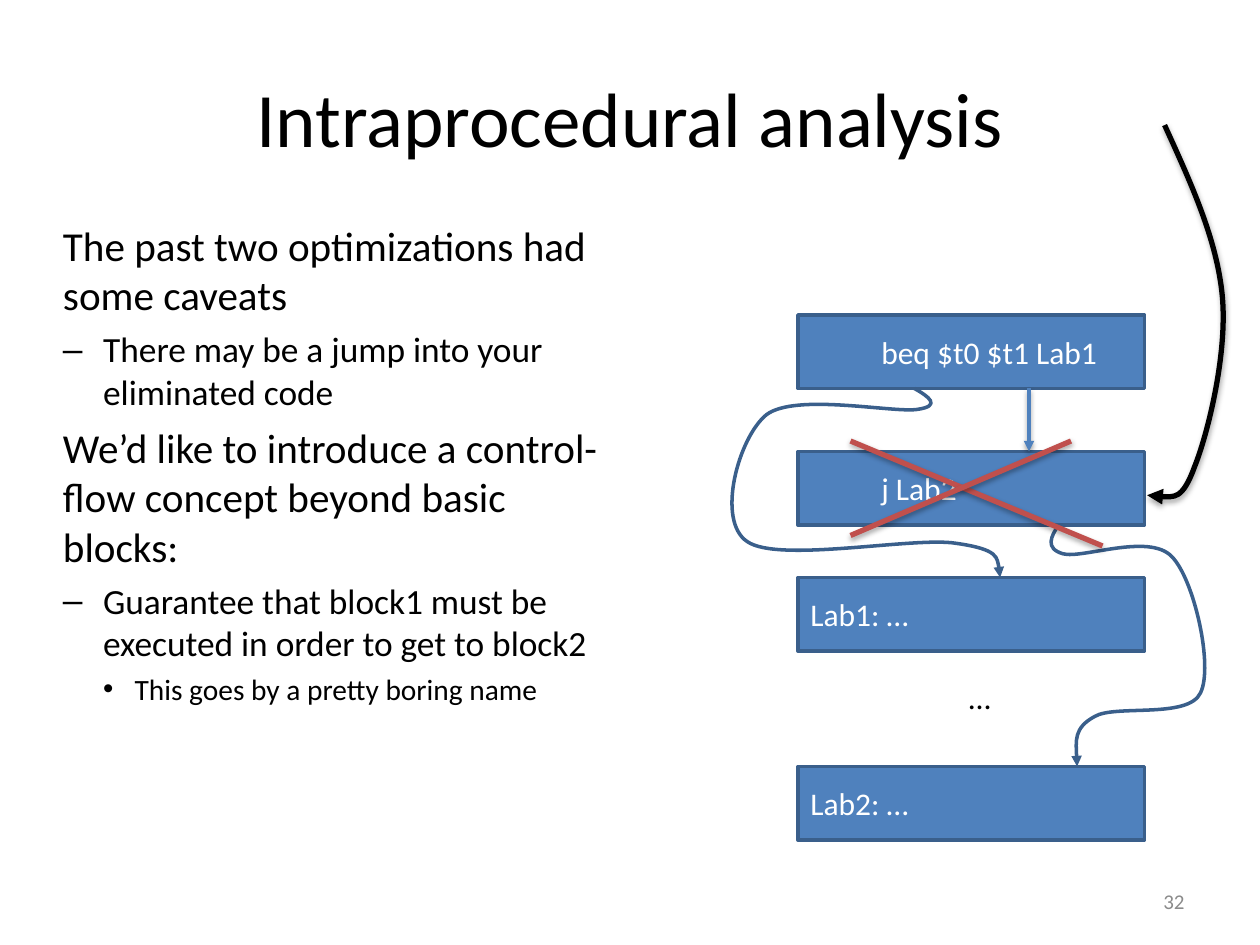
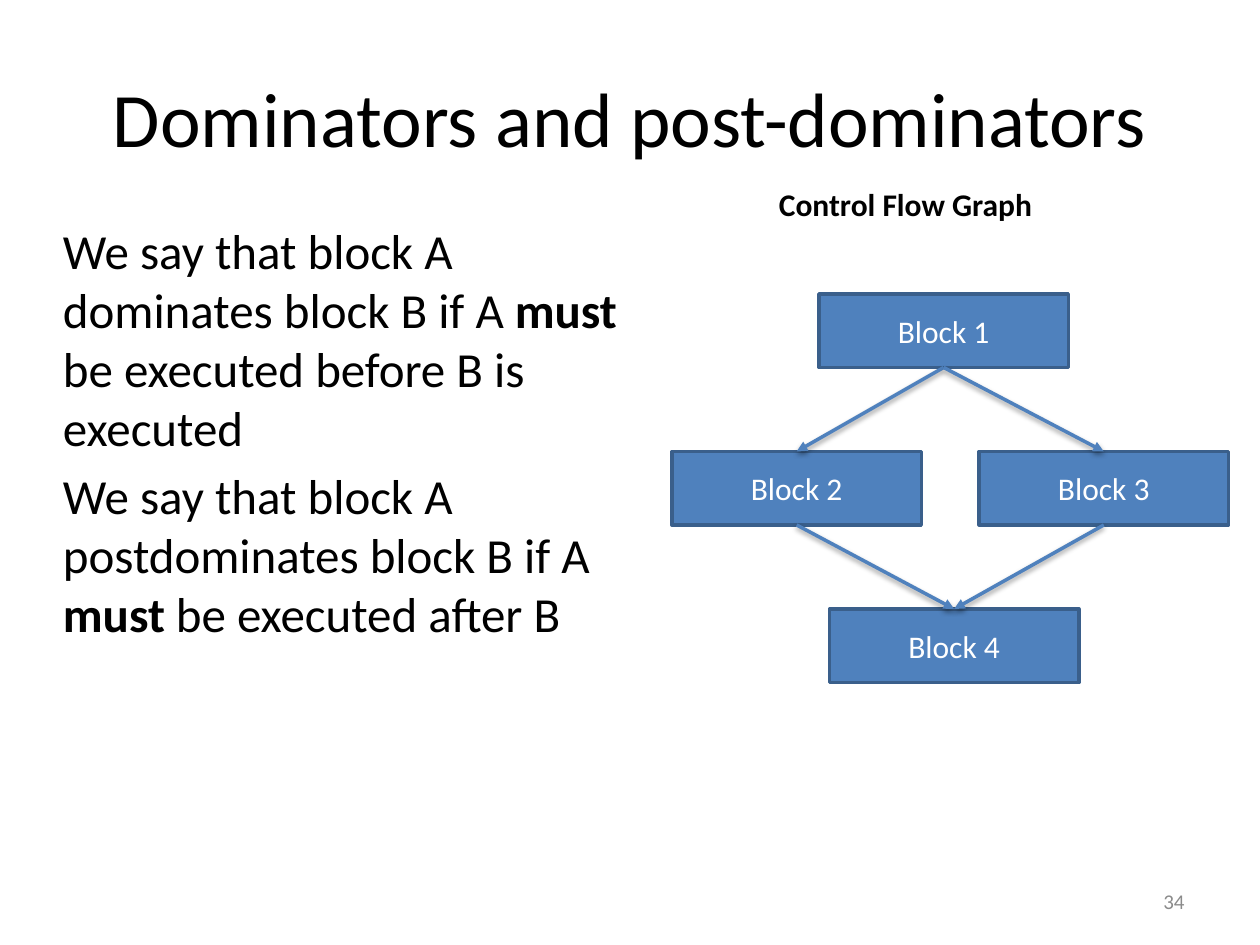
from lxml import etree
from pptx import Presentation
from pptx.dml.color import RGBColor
from pptx.enum.shapes import MSO_CONNECTOR, MSO_SHAPE
from pptx.enum.text import MSO_ANCHOR, PP_ALIGN
from pptx.oxml.ns import qn
from pptx.util import Pt

RECTANGLE = MSO_SHAPE.RECTANGLE
STRAIGHT = MSO_CONNECTOR.STRAIGHT
LEFT, CENTER, RIGHT = PP_ALIGN.LEFT, PP_ALIGN.CENTER, PP_ALIGN.RIGHT
TOP, MIDDLE = MSO_ANCHOR.TOP, MSO_ANCHOR.MIDDLE
BOTTOM_SIDE, TOP_SIDE = 2, 0

FONT = "Calibri"
BULLET_FONT = "Arial"
COLORS = {"text": "000000", "number": "8B8B8B", "block": "4F81BD",
          "edge": "3A5F8B", "block_text": "FFFFFF", "cross": "C0504D"}
BLOCK_HEIGHT = 42
# Level: left margin, hanging indent, space before, bullet
LEVELS = [(0, 0, 5.6, None), (23, -23, 4.8, "–"), (41, -18, 4, "•")]

SLIDES = [
    {
        "title": "Intraprocedural analysis",
        "number": "32",
        # Level, size, spans of (text, bold)
        "body": [
            (0, 23.5, [("The past two optimizations had some caveats", False)]),
            (1, 20.2, [("There may be a jump into your eliminated code", False)]),
            (0, 23.5, [("We’d like to introduce a control-flow concept beyond basic blocks:", False)]),
            (1, 20.2, [("Guarantee that block1 must be executed in order to get to block2", False)]),
            (2, 16.8, [("This goes by a pretty boring name", False)]),
        ],
        "block_width": 198,
        "block_align": LEFT,
        # Text, left, top, text indent
        "blocks": [("beq $t0 $t1 Lab1", 456, 180, 40.5), ("j Lab2", 456, 258, 40.5),
                   ("Lab1: …", 456, 330, 0), ("Lab2: …", 456, 438, 0)],
        "joins": [],
        # Text, left, top, width, bold, wrap
        "label": ("…", 546.5, 384, 26.5, False, False),
    },
    {
        "title": "Dominators and post-dominators",
        "number": "34",
        "body": [
            (0, 28, [("We say that block A dominates block B if A ", False),
                     ("must", True), (" be executed before B is executed", False)]),
            (0, 28, [("We say that block A postdominates block B if A ", False),
                     ("must", True), (" be executed after B", False)]),
        ],
        "block_width": 142.5,
        "block_align": CENTER,
        "blocks": [("Block 1", 468, 168, 0), ("Block 2", 384, 258, 0),
                   ("Block 3", 559.5, 258, 0), ("Block 4", 474, 348, 0)],
        "joins": [(0, 1), (0, 2), (1, 3), (2, 3)],
        "label": ("Control Flow Graph", 438, 102, 186, True, True),
    },
]


def write(shape, text, size, color, align=LEFT, anchor=TOP, bold=False, wrap=True):
    frame = shape.text_frame
    frame.word_wrap = wrap
    frame.vertical_anchor = anchor
    para = frame.paragraphs[0]
    para.text = text
    para.alignment = align
    para.font.name = FONT
    para.font.size = Pt(size)
    para.font.bold = bold
    para.font.color.rgb = RGBColor.from_string(COLORS[color])
    return para


def style_line(shape, color, width, arrow=True, shadow=0):
    """Colour a line, with an optional arrowhead and shadow opacity in percent."""
    shape.line.color.rgb = RGBColor.from_string(COLORS[color])
    shape.line.width = Pt(width)
    properties = shape._element.spPr
    if arrow:
        etree.SubElement(properties.find(qn("a:ln")), qn("a:tailEnd"), type="triangle")
    effects = etree.SubElement(properties, qn("a:effectLst"))
    if shadow:
        outer = etree.SubElement(effects, qn("a:outerShdw"), blurRad=str(Pt(3.1)),
                                 dist=str(Pt(1.7)), dir="5400000", rotWithShape="0")
        black = etree.SubElement(outer, qn("a:srgbClr"), val="000000")
        etree.SubElement(black, qn("a:alpha"), val=str(shadow * 1000))


deck = Presentation()
deck.slide_width, deck.slide_height = Pt(720), Pt(540)
pages = []

for content in SLIDES:
    page = deck.slides.add_slide(deck.slide_layouts[6])
    pages.append(page)

    # Title and body
    title = page.shapes.add_textbox(Pt(36), Pt(21.6), Pt(648), Pt(90))
    body = page.shapes.add_textbox(Pt(36), Pt(126), Pt(318), Pt(356.4))
    for box in (title, body):
        frame = box.text_frame
        frame.margin_left = frame.margin_right = frame.margin_top = frame.margin_bottom = 0
    write(title, content["title"], 44, "text", CENTER, MIDDLE)

    frame = body.text_frame
    frame.word_wrap = True
    for index, (level, size, spans) in enumerate(content["body"]):
        para = frame.add_paragraph() if index else frame.paragraphs[0]
        margin, indent, space, bullet = LEVELS[level]
        para.level = level
        para.space_before = Pt(space)
        para.font.name = FONT
        para.font.size = Pt(size)
        para.font.color.rgb = RGBColor.from_string(COLORS["text"])
        for text, bold in spans:
            span = para.add_run()
            span.text = text
            span.font.bold = bold
        settings = para._p.get_or_add_pPr()
        settings.set("marL", str(Pt(margin)))
        settings.set("indent", str(Pt(indent)))
        if bullet:
            spacing = settings.find(qn("a:spcBef"))
            spacing.addnext(etree.Element(qn("a:buChar"), char=bullet))
            spacing.addnext(etree.Element(qn("a:buFont"), typeface=BULLET_FONT))

    # Code blocks
    blocks = []
    for text, left, top, indent in content["blocks"]:
        block = page.shapes.add_shape(RECTANGLE, Pt(left), Pt(top),
                                      Pt(content["block_width"]), Pt(BLOCK_HEIGHT))
        block.fill.solid()
        block.fill.fore_color.rgb = RGBColor.from_string(COLORS["block"])
        style_line(block, "edge", 2, arrow=False)
        para = write(block, text, 18, "block_text", content["block_align"], MIDDLE)
        para._p.get_or_add_pPr().set("marL", str(Pt(indent)))
        blocks.append(block)

    # Arrows from block to block
    for source, target in content["joins"]:
        arrow = page.shapes.add_connector(STRAIGHT, 0, 0, 0, 0)
        arrow.begin_connect(blocks[source], BOTTOM_SIDE)
        arrow.end_connect(blocks[target], TOP_SIDE)
        style_line(arrow, "block", 2, shadow=38)

    # Diagram label and slide number
    text, left, top, width, bold, wrap = content["label"]
    label = page.shapes.add_textbox(Pt(left), Pt(top), Pt(width), Pt(29))
    write(label, text, 18, "text", bold=bold, wrap=wrap)
    number = page.shapes.add_textbox(Pt(516), Pt(500.5), Pt(168), Pt(28.8))
    write(number, content["number"], 12, "number", RIGHT, MIDDLE)

# Curved jumps on the first slide: colour, width, shadow, frame,
# then the start and, for each piece, two controls and an end
page = pages[0]
JUMPS = [
    ("edge", 2, 0, (418.5, 222, 153, 108),
     [(522.5, 222),
      (530.5, 226.5), (538.5, 232), (524, 234),
      (510, 236), (454.5, 224.5), (438, 237),
      (422, 250), (409, 297.5), (427, 309.5),
      (445, 322), (522.5, 306.5), (546.5, 310.5),
      (571, 314), (571, 322.5), (571.5, 330)]),
    ("edge", 2, 0, (600.5, 300, 87.5, 138),
     [(605, 300),
      (600.5, 306.5), (597, 313.5), (607.5, 316.5),
      (618.5, 319.5), (656.5, 304.5), (669.5, 318),
      (682.5, 331), (693.5, 381), (686, 396),
      (679, 411), (637, 402.5), (625.5, 409.5),
      (613.5, 416), (615, 427), (615.5, 438)]),
    ("text", 3, 35, (655.5, 71.5, 43, 212.5),
     [(665.5, 71.5),
      (680.5, 104.5), (695.5, 137), (698.5, 169.5),
      (701.5, 202.5), (690, 248.5), (682.5, 267),
      (675.5, 286), (665.5, 284.5), (655.5, 283)]),
]
for color, width, shadow, bounds, knots in JUMPS:
    builder = page.shapes.build_freeform(*map(Pt, knots[0]))
    builder.add_line_segments([tuple(map(Pt, knot)) for knot in knots[3::3]], close=False)
    jump = builder.convert_to_shape()
    jump.left, jump.top, jump.width, jump.height = map(Pt, bounds)

    # Bend the straight pieces into cubic curves within the frame
    outline = next(jump._element.iter(qn("a:path")))
    outline.set("w", str(jump.width))
    outline.set("h", str(jump.height))
    for piece in list(outline):
        outline.remove(piece)
    pieces = [("a:moveTo", knots[:1])]
    pieces += [("a:cubicBezTo", knots[first:first + 3]) for first in range(1, len(knots), 3)]
    for tag, places in pieces:
        piece = etree.SubElement(outline, qn(tag))
        for x, y in places:
            etree.SubElement(piece, qn("a:pt"), x=str(Pt(x - bounds[0])), y=str(Pt(y - bounds[1])))
    jump.fill.background()
    style_line(jump, color, width, shadow=shadow)

# Fall-through arrow and the cross over the dead block
STROKES = [("block", 2, True, 38, (588, 222), (588, 258)),
           ("cross", 3, False, 35, (486, 252), (630, 312)),
           ("cross", 3, False, 35, (612, 252), (486, 306))]
for color, width, arrow, shadow, start, end in STROKES:
    stroke = page.shapes.add_connector(STRAIGHT, *map(Pt, start + end))
    style_line(stroke, color, width, arrow, shadow)

deck.save("out.pptx")
